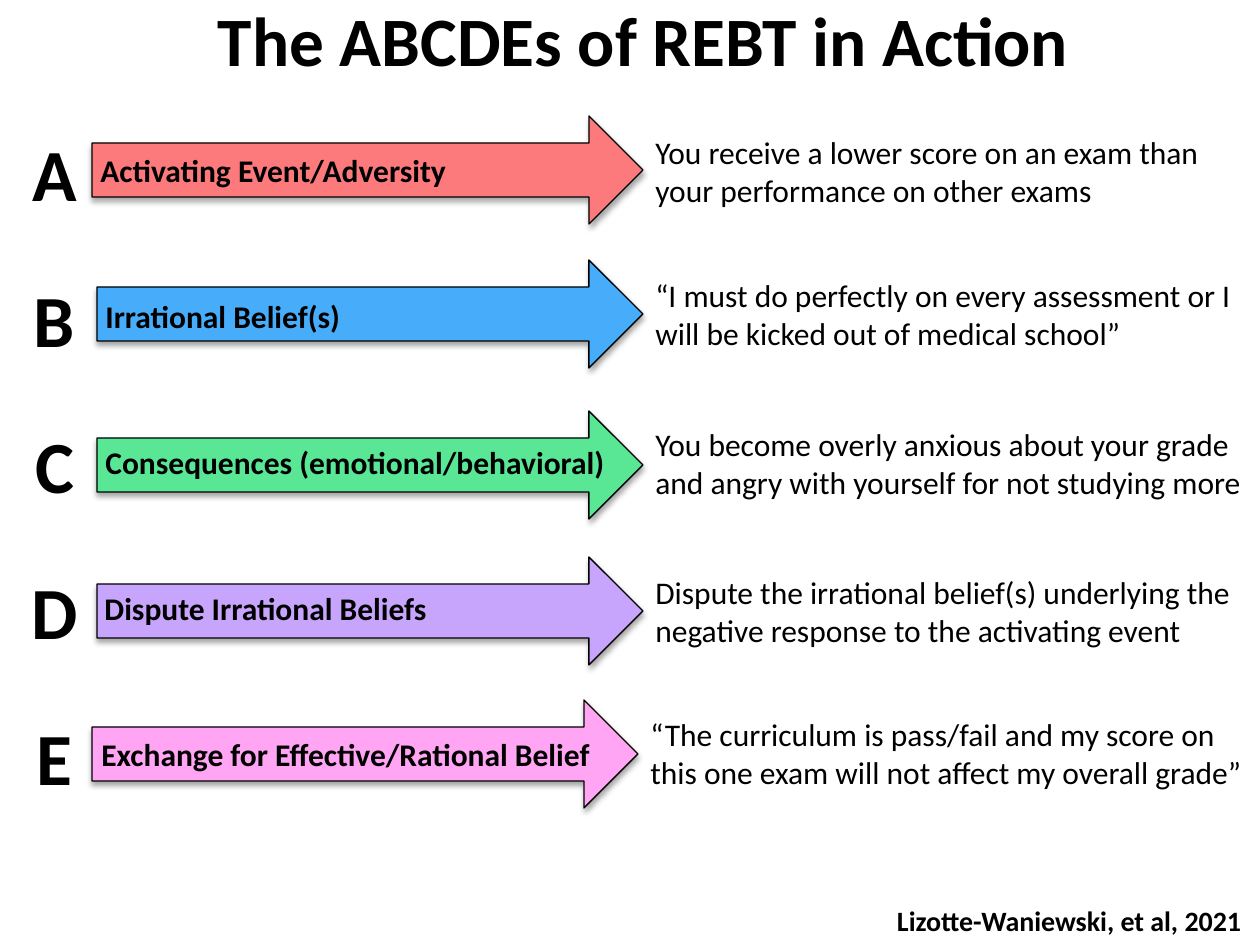
from lxml import etree
from pptx import Presentation
from pptx.dml.color import RGBColor
from pptx.enum.shapes import MSO_SHAPE
from pptx.enum.text import MSO_ANCHOR, PP_ALIGN
from pptx.oxml.ns import qn
from pptx.util import Emu, Pt

RIGHT_ARROW = MSO_SHAPE.RIGHT_ARROW
LEFT, CENTER, RIGHT = PP_ALIGN.LEFT, PP_ALIGN.CENTER, PP_ALIGN.RIGHT
TOP, MIDDLE = MSO_ANCHOR.TOP, MSO_ANCHOR.MIDDLE

PX = 914400 // 126
WIDTH, HEIGHT = 1260, 945
FONT = "Calibri"
COLORS = {
    "black": "000000",
    "A": "FC797C",
    "B": "47ADFB",
    "C": "59E795",
    "D": "C8A5FD",
    "E": "FFA5F3",
}

TITLE = "The ABCDEs of REBT in Action"
CITATION = "Lizotte-Waniewski, et al, 2021"
# letter, label, example, arrow left, arrow right, arrow top, label left, example top
STEPS = [
    ("A", "Activating Event/Adversity",
     "You receive a lower score on an exam than your performance on other exams",
     92, 643, 116, 88, 127),
    ("B", "Irrational Belief(s)",
     "“I must do perfectly on every assessment or I will be kicked out of medical school”",
     97, 643, 260, 93, 270),
    ("C", "Consequences (emotional/behavioral)",
     "You become overly anxious about your grade and angry with yourself for not studying more",
     97, 643, 411, 93, 419),
    ("D", "Dispute Irrational Beliefs",
     "Dispute the irrational belief(s) underlying the negative response to the activating event",
     97, 643, 557, 92, 567),
    ("E", "Exchange for Effective/Rational Belief",
     "“The curriculum is pass/fail and my score on this one exam will not affect my overall grade”",
     92, 638, 700, 89, 709),
]
ROW_PITCH = 146
LETTER_TOP, LABEL_TOP = 122, 145
ARROW_HEIGHT = 108


def px(*values):
    return [Emu(value * PX) for value in values]


def add_text(slide, box, text, size, bold=True, align=LEFT, anchor=TOP, wrap=False):
    shape = slide.shapes.add_textbox(*px(*box))
    frame = shape.text_frame
    frame.word_wrap = wrap
    frame.vertical_anchor = anchor
    paragraph = frame.paragraphs[0]
    paragraph.text = text
    paragraph.alignment = align
    font = paragraph.font
    font.name, font.size, font.bold = FONT, Pt(size), bold
    font.color.rgb = RGBColor.from_string(COLORS["black"])


def add_shadow(shape):
    shape.shadow.inherit = False
    effects = shape._element.spPr.find(qn("a:effectLst"))
    shadow = etree.SubElement(
        effects, qn("a:outerShdw"), blurRad=str(Pt(3.1)), dist=str(Pt(1.8)),
        dir="5400000", rotWithShape="0")
    color = etree.SubElement(shadow, qn("a:srgbClr"), val=COLORS["black"])
    etree.SubElement(color, qn("a:alpha"), val="35000")


def add_arrow(slide, left, right, top, color):
    arrow = slide.shapes.add_shape(
        RIGHT_ARROW, *px(left, top, right - left, ARROW_HEIGHT))
    arrow.fill.solid()
    arrow.fill.fore_color.rgb = RGBColor.from_string(color)
    arrow.line.color.rgb = RGBColor.from_string(COLORS["black"])
    arrow.line.width = Pt(0.75)
    add_shadow(arrow)


def main():
    presentation = Presentation()
    presentation.slide_width, presentation.slide_height = px(WIDTH, HEIGHT)
    slide = presentation.slides.add_slide(presentation.slide_layouts[6])

    add_text(slide, (190, -15, 907, 108), TITLE, 39.6, align=CENTER, anchor=MIDDLE, wrap=True)
    for row, step in enumerate(STEPS):
        letter, label, example, left, right, top, label_left, example_top = step
        offset = row * ROW_PITCH
        add_arrow(slide, left, right, top, COLORS[letter])
        add_text(slide, (19, LETTER_TOP + offset, 71, 102), letter, 42, align=CENTER)
        add_text(slide, (label_left, LABEL_TOP + offset, right - label_left, 50), label, 18)
        add_text(slide, (right, example_top, WIDTH - right, 89), example, 18,
                 bold=False, wrap=True)
    add_text(slide, (854, 897, 400, 47), CITATION, 16, align=RIGHT)

    presentation.save("out.pptx")


if __name__ == "__main__":
    main()
